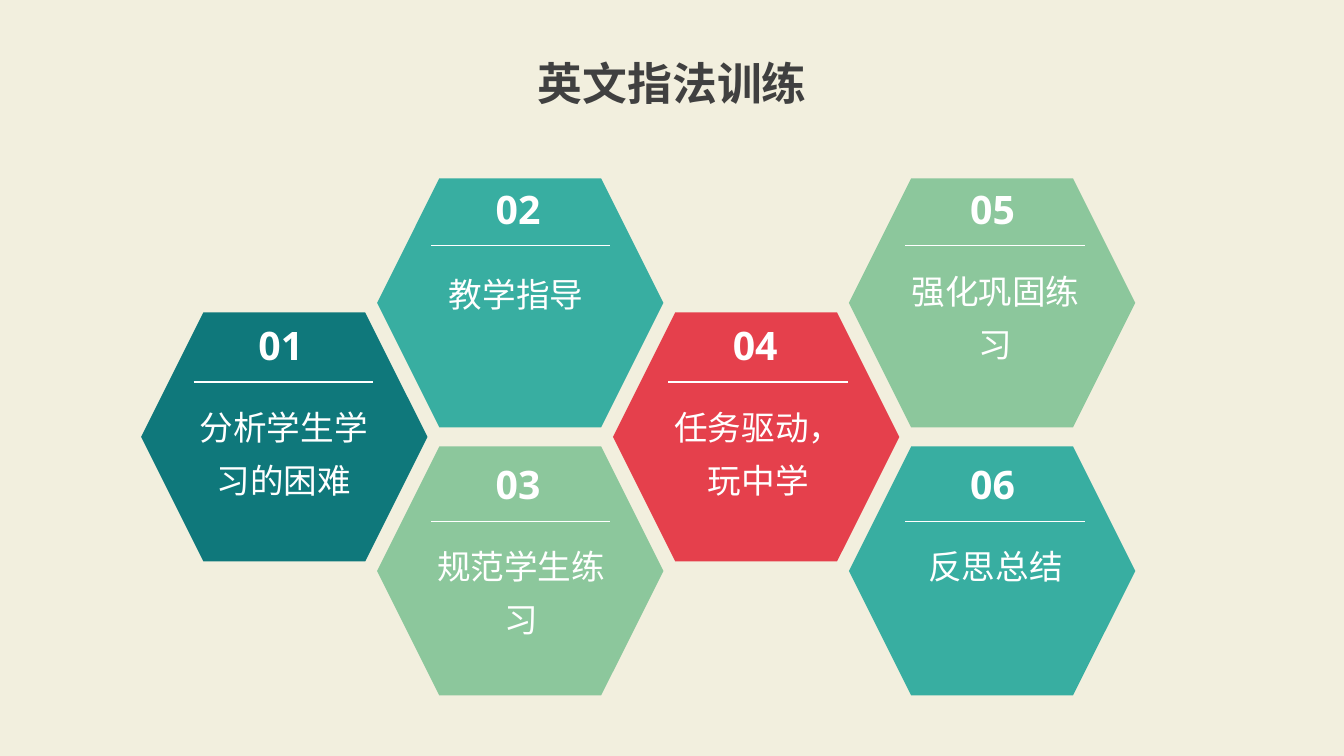
import pptx
import pptx.util
import pptx.dml.color
import pptx.enum.shapes
import pptx.enum.text
import pptx.oxml.ns
from lxml import etree

SLIDE_WIDTH, SLIDE_HEIGHT = 13.33, 7.5
GRID_LEFT, GRID_TOP = 1.4, 1.77
COLUMN, ROW = 2.34, 1.33
HEXAGON_WIDTH, HEXAGON_HEIGHT = 2.84, 2.47
CONTENT_LEFT, CONTENT_COLUMN, CONTENT_WIDTH = 1.92, 2.353, 1.78
DIVIDER_TOPS = (2.44, 3.79, 5.17)

CENTER = pptx.enum.text.PP_ALIGN.CENTER
JUSTIFY = pptx.enum.text.PP_ALIGN.JUSTIFY
CHINESE, LATIN = "Noto Sans CJK SC", "Open Sans"
NO_MARGINS = dict.fromkeys(("margin_left", "margin_top", "margin_right", "margin_bottom"), 0)

TITLE = {"name": CHINESE, "size": pptx.util.Pt(32), "bold": True}
NUMBER = {"name": LATIN, "size": pptx.util.Pt(28), "bold": True}
LABEL = {"name": CHINESE, "size": pptx.util.Pt(24)}

STEPS = (
    ("01", "分析学生学习的困难", 0, 1, "0F787B"),
    ("02", "教学指导", 1, 0, "38AEA1"),
    ("03", "规范学生练习", 1, 2, "8CC79C"),
    ("05", "强化巩固练习", 3, 0, "8CC79C"),
    ("06", "反思总结", 3, 2, "38AEA1"),
    ("04", "任务驱动，玩中学", 2, 1, "E5404C"),
)


def rgb(value):
    return pptx.dml.color.RGBColor.from_string(value)


def inches(*lengths):
    return [pptx.util.Inches(length) for length in lengths]


def apply_format(target, values):
    for attribute, value in values.items():
        setattr(target, attribute, value)


def add_text(shapes, wording, place, font, color, paragraph_format, frame_format):
    frame = shapes.add_textbox(*inches(*place)).text_frame
    apply_format(frame, {
        "word_wrap": True,
        "auto_size": pptx.enum.text.MSO_AUTO_SIZE.SHAPE_TO_FIT_TEXT,
        **frame_format,
    })
    paragraph = frame.paragraphs[0]
    apply_format(paragraph, paragraph_format)
    run = paragraph.add_run()
    run.text = wording
    apply_format(run.font, font)
    run.font.color.rgb = rgb(color)
    east_asian = etree.SubElement(run.font._element, pptx.oxml.ns.qn("a:ea"))
    east_asian.set("typeface", font["name"])


def add_hexagon(shapes, column, row, color):
    hexagon = shapes.add_shape(
        pptx.enum.shapes.MSO_SHAPE.HEXAGON,
        *inches(GRID_LEFT + column * COLUMN, GRID_TOP + row * ROW,
                HEXAGON_WIDTH, HEXAGON_HEIGHT))
    hexagon.shadow.inherit = False
    hexagon.fill.solid()
    hexagon.fill.fore_color.rgb = rgb(color)
    hexagon.line.fill.background()


def add_divider(shapes, left, top):
    divider = shapes.add_connector(
        pptx.enum.shapes.MSO_CONNECTOR.STRAIGHT,
        *inches(left, top, left + CONTENT_WIDTH, top))
    divider.line.color.rgb = rgb("FFFFFF")
    divider.line.width = pptx.util.Pt(0.75)
    etree.SubElement(divider._element.spPr, pptx.oxml.ns.qn("a:effectLst"))


def add_step(slide, number, label, column, row, color):
    shapes = slide.shapes.add_group_shape().shapes
    left = CONTENT_LEFT + column * CONTENT_COLUMN
    top = DIVIDER_TOPS[row]
    one_line = len(label) < 5
    justified = number == "02"
    label_left, label_top = (left + 0.18, top + 0.16) if justified else (left - 0.01, top + 0.13)
    add_hexagon(shapes, column, row, color)
    add_text(shapes, number, (left + 0.18, top - 0.65, 1.37, 0.6),
             NUMBER, "FFFFFF", {"alignment": CENTER}, {})
    add_text(shapes, label, (label_left, label_top, 1.81, 0.47 if one_line else 1),
             LABEL, "FFFFFF",
             {"alignment": JUSTIFY if justified else CENTER, "line_spacing": 1.3},
             NO_MARGINS)
    add_divider(shapes, left, top)


def main():
    presentation = pptx.Presentation()
    presentation.slide_width, presentation.slide_height = inches(SLIDE_WIDTH, SLIDE_HEIGHT)
    slide = presentation.slides.add_slide(presentation.slide_layouts[6])
    slide.background.fill.solid()
    slide.background.fill.fore_color.rgb = rgb("F2EFDE")
    add_text(slide.shapes, "英文指法训练", (3.39, 0.5, 6.56, 0.64),
             TITLE, "404040", {"alignment": CENTER}, {})
    for step in STEPS:
        add_step(slide, *step)
    presentation.save("out.pptx")


if __name__ == "__main__":
    main()
